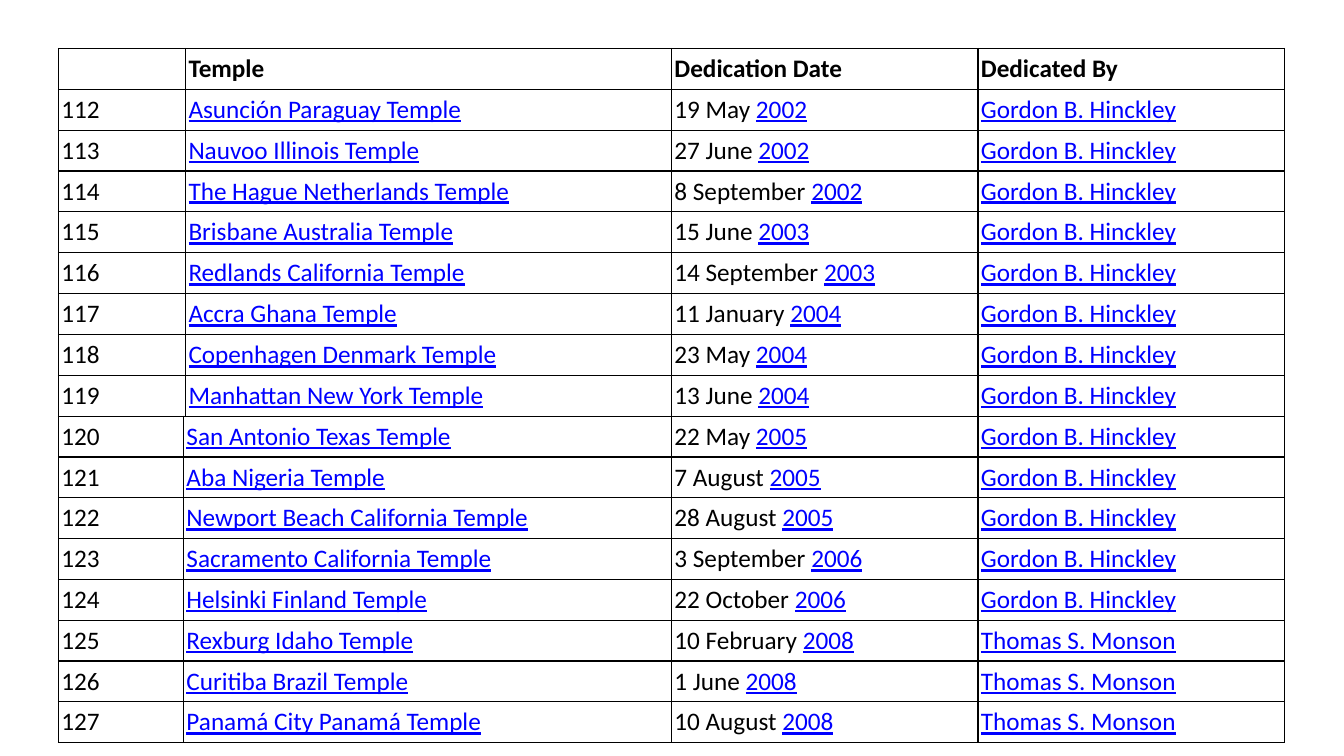
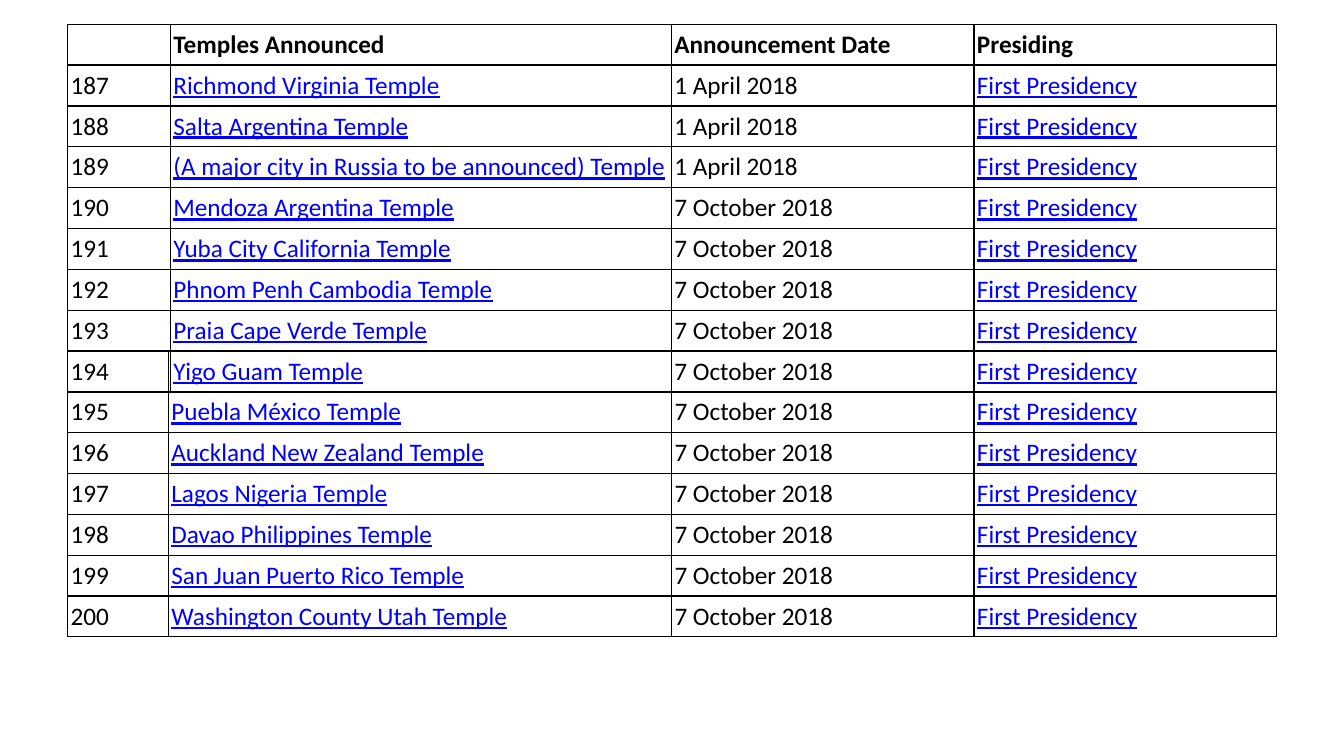
import pptx
import pptx.dml.color
import pptx.enum.text
import pptx.oxml
import pptx.oxml.ns
import pptx.slide
import pptx.table
import pptx.util
from dataclasses import dataclass
from typing import Any, NamedTuple

Inches = pptx.util.Inches

BLACK = "000000"
LINK_BLUE = "0000FF"
BORDER_WIDTH = pptx.util.Pt(1)

BASE_FONT = {"name": "Calibri", "size": pptx.util.Pt(18), "bold": False, "underline": False}
CELL_FORMAT = {
    "margin_left": Inches(0.03),
    "margin_right": Inches(0.03),
    "margin_top": Inches(0.03),
    "margin_bottom": Inches(0.03),
    "vertical_anchor": pptx.enum.text.MSO_ANCHOR.MIDDLE,
}
PLAIN_TABLE = {"first_row": False, "horz_banding": False}


class Style(NamedTuple):
    color: str
    font: dict[str, Any]


BODY = Style(BLACK, BASE_FONT)
HEADING = Style(BLACK, BASE_FONT | {"bold": True})
LINK = Style(LINK_BLUE, BASE_FONT | {"underline": True})


class Run(NamedTuple):
    text: str
    style: Style = BODY


Row = list[list[Run]]


class Dedication(NamedTuple):
    temple: str
    day: str
    year: str
    president: str


class Announcement(NamedTuple):
    temple: str
    date: str


@dataclass
class TempleTable:
    left: float
    top: float
    height: float
    columns: list[float]
    rows: list[Row]


HINCKLEY = "Gordon B. Hinckley"
MONSON = "Thomas S. Monson"
PRESIDING = "First Presidency"
APRIL = "1 April 2018"
OCTOBER = "7 October 2018"

DEDICATIONS_FROM_112 = [
    Dedication("Asunción Paraguay Temple", "19 May", "2002", HINCKLEY),
    Dedication("Nauvoo Illinois Temple", "27 June", "2002", HINCKLEY),
    Dedication("The Hague Netherlands Temple", "8 September", "2002", HINCKLEY),
    Dedication("Brisbane Australia Temple", "15 June", "2003", HINCKLEY),
    Dedication("Redlands California Temple", "14 September", "2003", HINCKLEY),
    Dedication("Accra Ghana Temple", "11 January", "2004", HINCKLEY),
    Dedication("Copenhagen Denmark Temple", "23 May", "2004", HINCKLEY),
    Dedication("Manhattan New York Temple", "13 June", "2004", HINCKLEY),
]
DEDICATIONS_FROM_120 = [
    Dedication("San Antonio Texas Temple", "22 May", "2005", HINCKLEY),
    Dedication("Aba Nigeria Temple", "7 August", "2005", HINCKLEY),
    Dedication("Newport Beach California Temple", "28 August", "2005", HINCKLEY),
    Dedication("Sacramento California Temple", "3 September", "2006", HINCKLEY),
    Dedication("Helsinki Finland Temple", "22 October", "2006", HINCKLEY),
    Dedication("Rexburg Idaho Temple", "10 February", "2008", MONSON),
    Dedication("Curitiba Brazil Temple", "1 June", "2008", MONSON),
    Dedication("Panamá City Panamá Temple", "10 August", "2008", MONSON),
]
ANNOUNCEMENTS_FROM_187 = [
    Announcement("Richmond Virginia Temple", APRIL),
    Announcement("Salta Argentina Temple", APRIL),
    Announcement("(A major city in Russia to be announced) Temple", APRIL),
    Announcement("Mendoza Argentina Temple", OCTOBER),
    Announcement("Yuba City California Temple", OCTOBER),
    Announcement("Phnom Penh Cambodia Temple", OCTOBER),
    Announcement("Praia Cape Verde Temple", OCTOBER),
    Announcement("Yigo Guam Temple", OCTOBER),
]
ANNOUNCEMENTS_FROM_195 = [
    Announcement("Puebla México Temple", OCTOBER),
    Announcement("Auckland New Zealand Temple", OCTOBER),
    Announcement("Lagos Nigeria Temple", OCTOBER),
    Announcement("Davao Philippines Temple", OCTOBER),
    Announcement("San Juan Puerto Rico Temple", OCTOBER),
    Announcement("Washington County Utah Temple", OCTOBER),
]


def heading_row(*headings: str) -> Row:
    return [[]] + [[Run(heading, HEADING)] for heading in headings]


def dedication_rows(first_number: int, dedications: list[Dedication]) -> list[Row]:
    return [
        [
            [Run(str(number))],
            [Run(entry.temple, LINK)],
            [Run(f"{entry.day} "), Run(entry.year, LINK)],
            [Run(entry.president, LINK)],
        ]
        for number, entry in enumerate(dedications, first_number)
    ]


def announcement_rows(first_number: int, announcements: list[Announcement]) -> list[Row]:
    return [
        [[Run(str(number))], [Run(entry.temple, LINK)], [Run(entry.date)], [Run(PRESIDING, LINK)]]
        for number, entry in enumerate(announcements, first_number)
    ]


def rgb(color: str) -> pptx.dml.color.RGBColor:
    return pptx.dml.color.RGBColor.from_string(color)


def apply_format(target: Any, values: dict[str, Any]) -> None:
    for attribute, value in values.items():
        setattr(target, attribute, value)


def add_borders(cell: pptx.table._Cell) -> None:
    properties = cell._tc.get_or_add_tcPr()
    for side in ("lnL", "lnR", "lnT", "lnB"):
        properties.append(pptx.oxml.parse_xml(
            f'<a:{side} {pptx.oxml.ns.nsdecls("a")} w="{BORDER_WIDTH}">'
            f'<a:solidFill><a:srgbClr val="{BLACK}"/></a:solidFill></a:{side}>'
        ))


def fill_cell(cell: pptx.table._Cell, runs: list[Run]) -> None:
    apply_format(cell, CELL_FORMAT)
    add_borders(cell)
    cell.fill.background()
    paragraph = cell.text_frame.paragraphs[0]
    for text, style in runs:
        run = paragraph.add_run()
        run.text = text
        apply_format(run.font, style.font)
        run.font.color.rgb = rgb(style.color)


def add_temple_table(slide: pptx.slide.Slide, layout: TempleTable) -> None:
    table = slide.shapes.add_table(
        len(layout.rows), len(layout.columns),
        Inches(layout.left), Inches(layout.top),
        Inches(sum(layout.columns)), Inches(layout.height),
    ).table
    apply_format(table, PLAIN_TABLE)
    for column, width in zip(table.columns, layout.columns):
        column.width = Inches(width)
    for table_row, row in zip(table.rows, layout.rows):
        for cell, runs in zip(table_row.cells, row):
            fill_cell(cell, runs)


SLIDES = [
    [
        TempleTable(0.58, 4.13, 3.24, [1.24, 4.84, 3.04, 3.04],
                    dedication_rows(120, DEDICATIONS_FROM_120)),
        TempleTable(0.58, 0.48, 3.65, [1.26, 4.82, 3.04, 3.04],
                    [heading_row("Temple", "Dedication Date", "Dedicated By")]
                    + dedication_rows(112, DEDICATIONS_FROM_112)),
    ],
    [
        TempleTable(0.67, 0.24, 3.65, [1.02, 4.97, 3, 3],
                    [heading_row("Temples Announced", "Announcement Date", "Presiding")]
                    + announcement_rows(187, ANNOUNCEMENTS_FROM_187)),
        TempleTable(0.67, 3.48, 2.84, [1, 4.99, 3, 3],
                    [[[], [], [], []]] + announcement_rows(195, ANNOUNCEMENTS_FROM_195)),
    ],
]


def main() -> None:
    presentation = pptx.Presentation()
    presentation.slide_width = Inches(13.33)
    presentation.slide_height = Inches(7.5)
    blank_layout = presentation.slide_layouts.get_by_name("Blank")
    for temple_tables in SLIDES:
        slide = presentation.slides.add_slide(blank_layout)
        for temple_table in temple_tables:
            add_temple_table(slide, temple_table)
    presentation.save("out.pptx")


if __name__ == "__main__":
    main()
